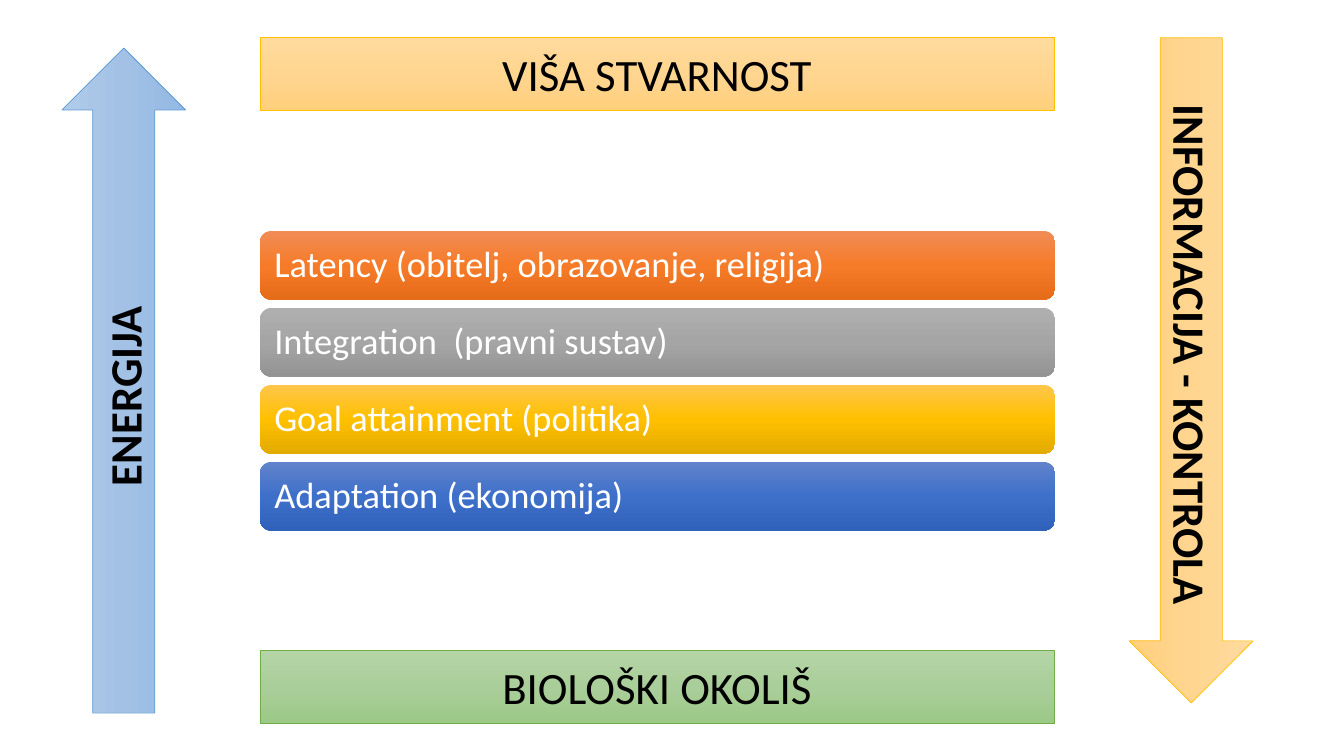
from copy import deepcopy

from pptx import Presentation
from pptx import util as u
from pptx.dml.color import RGBColor
from pptx.enum import shapes, text
from pptx.oxml.ns import qn

BLACK = RGBColor(0x00, 0x00, 0x00)
WHITE = RGBColor(0xFF, 0xFF, 0xFF)
GOLD_LINE = RGBColor(0xFF, 0xC0, 0x00)
GREEN_LINE = RGBColor(0x70, 0xAD, 0x47)
BLUE_LINE = RGBColor(0x5B, 0x9B, 0xD5)
PALE_GOLD = (RGBColor(0xFF, 0xDB, 0x9E), RGBColor(0xFF, 0xD5, 0x90), RGBColor(0xFF, 0xD0, 0x7C))
PALE_GREEN = (RGBColor(0xB5, 0xD5, 0xA7), RGBColor(0xAA, 0xCE, 0x9A), RGBColor(0x9C, 0xC9, 0x87))
PALE_BLUE = (RGBColor(0xB1, 0xCB, 0xE9), RGBColor(0xA3, 0xC1, 0xE5), RGBColor(0x93, 0xB9, 0xE4))
ORANGE = (RGBColor(0xF1, 0x8C, 0x57), RGBColor(0xF6, 0x7B, 0x28), RGBColor(0xE5, 0x6C, 0x19))
GRAY = (RGBColor(0xAF, 0xAF, 0xAF), RGBColor(0xA5, 0xA5, 0xA5), RGBColor(0x93, 0x93, 0x93))
GOLD = (RGBColor(0xFF, 0xC6, 0x4B), RGBColor(0xFF, 0xC0, 0x00), RGBColor(0xE3, 0xAB, 0x00))
BLUE = (RGBColor(0x61, 0x83, 0xCB), RGBColor(0x3E, 0x70, 0xCA), RGBColor(0x30, 0x62, 0xBB))

COLUMN_LEFT = 6.55
FUNCTIONS_TOP, FUNCTION_PITCH = 5.82, 1.94
FUNCTIONS = (
    ("Latency (obitelj, obrazovanje, religija)", ORANGE),
    ("Integration  (pravni sustav)", GRAY),
    ("Goal attainment (politika)", GOLD),
    ("Adaptation (ekonomija)", BLUE),
)


def write(shape, wording, size=32, color=BLACK, bold=False, align=text.PP_ALIGN.CENTER, spacing=1.0):
    """Put one formatted paragraph in the middle of a shape."""
    frame = shape.text_frame
    frame.word_wrap = True
    frame.vertical_anchor = text.MSO_ANCHOR.MIDDLE
    paragraph = frame.paragraphs[0]
    paragraph.text = wording
    paragraph.alignment = align
    paragraph.line_spacing = spacing
    font = paragraph.font
    font.name, font.size, font.bold = "Calibri", u.Pt(size), bold
    font.color.rgb = color


class Diagram:
    """Draws the parts of the diagram on one slide in a shared style."""

    def __init__(self, slide):
        """Keep the slide and the outline width."""
        self.slide = slide
        self.outline = u.Pt(0.5)

    def block(self, kind, left, top, width, height, gradient, line=None):
        """Add a shape with a three-stop downward gradient."""
        shape = self.slide.shapes.add_shape(kind, u.Cm(left), u.Cm(top), u.Cm(width), u.Cm(height))
        shape.shadow.inherit = False
        shape.fill.gradient()
        shape.fill.gradient_angle = 270
        stops = shape._element.spPr.find(qn("a:gradFill")).find(qn("a:gsLst"))
        stops.append(deepcopy(stops[-1]))
        for stop, position, color in zip(shape.fill.gradient_stops, (0, 0.5, 1), gradient):
            stop.position = position
            stop.color.rgb = color
        if line is None:
            shape.line.fill.background()
        else:
            shape.line.color.rgb = line
            shape.line.width = self.outline
        return shape

    def environment(self, wording, top, gradient, line):
        """Add a bar for the surroundings of the system."""
        bar = self.block(shapes.MSO_SHAPE.RECTANGLE, COLUMN_LEFT, top, 20.02, 1.85, gradient, line)
        write(bar, wording)

    def function(self, wording, top, gradient):
        """Add a rounded bar for one function of the system."""
        bar = self.block(shapes.MSO_SHAPE.ROUNDED_RECTANGLE, COLUMN_LEFT, top, 20.04, 1.73, gradient)
        frame = bar.text_frame
        frame.margin_left = frame.margin_right = frame.margin_top = frame.margin_bottom = u.Cm(0.28)
        write(bar, wording, size=26, color=WHITE, align=text.PP_ALIGN.LEFT, spacing=0.9)

    def flow(self, wording, center_x, center_y, rotation, gradient, line):
        """Add a vertical arrow around a centre point."""
        length, breadth = 16.76, 3.12
        arrow = self.block(shapes.MSO_SHAPE.RIGHT_ARROW, center_x - length / 2, center_y - breadth / 2,
                           length, breadth, gradient, line)
        arrow.rotation = rotation
        write(arrow, wording, bold=True)


def main():
    """Build and save the slide."""
    deck = Presentation()
    deck.slide_width, deck.slide_height = u.Cm(33.87), u.Cm(19.05)
    diagram = Diagram(deck.slides.add_slide(deck.slide_layouts[6]))
    for row, (wording, gradient) in enumerate(FUNCTIONS):
        diagram.function(wording, FUNCTIONS_TOP + row * FUNCTION_PITCH, gradient)
    diagram.environment("VIŠA STVARNOST", 0.94, PALE_GOLD, GOLD_LINE)
    diagram.environment("BIOLOŠKI OKOLIŠ", 16.38, PALE_GREEN, GREEN_LINE)
    diagram.flow("ENERGIJA", 3.12, 9.59, 270, PALE_BLUE, BLUE_LINE)
    diagram.flow("INFORMACIJA - KONTROLA", 30.02, 9.33, 90, PALE_GOLD, GOLD_LINE)
    deck.save("out.pptx")


if __name__ == "__main__":
    main()
